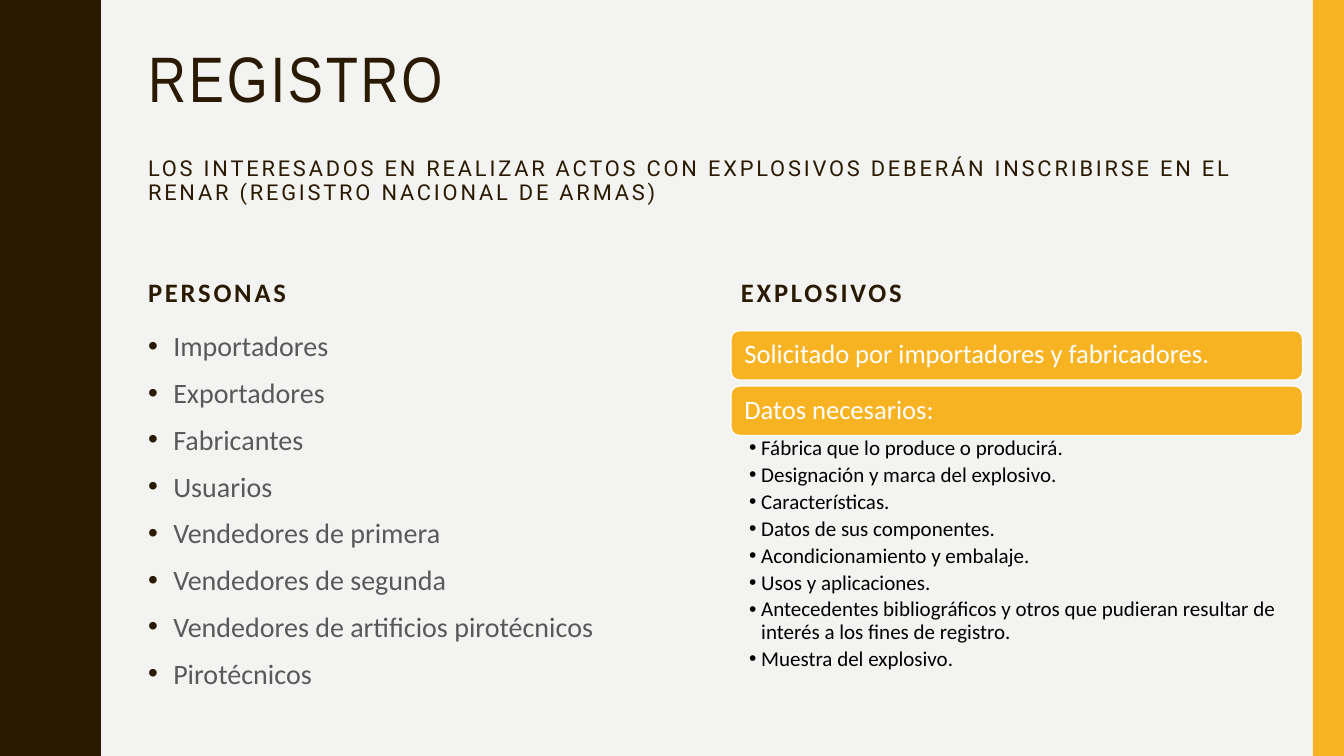
from lxml import etree
from pptx import Presentation
from pptx.dml.color import RGBColor
from pptx.enum.shapes import MSO_SHAPE
from pptx.enum.text import MSO_ANCHOR, MSO_AUTO_SIZE, PP_ALIGN
from pptx.oxml.ns import qn
from pptx.util import Inches, Pt

RECT, ROUND = MSO_SHAPE.RECTANGLE, MSO_SHAPE.ROUNDED_RECTANGLE
TOP, MID, LOW = MSO_ANCHOR.TOP, MSO_ANCHOR.MIDDLE, MSO_ANCHOR.BOTTOM
LEFT, FIXED = PP_ALIGN.LEFT, MSO_AUTO_SIZE.NONE

WIDE, HIGH = 13.33, 7.5
DARK, GOLD, PALE = "2A1A00", "F8B323", "F3F3F2"
WHITE, BLACK, GREY = "FFFFFF", "000000", "595959"
PAD = (0.1, 0.05, 0.1, 0.05)
BEND = [(0.78, 0), (0.78, 0.07), (0.79, 0.14), (0.8, 0.2), (0.81, 0.25),
        (0.83, 0.29), (0.85, 0.33), (0.87, 0.38), (0.89, 0.42),
        (0.91, 0.46), (0.93, 0.5), (0.95, 0.55), (0.96, 0.61), (0.97, 0.68)]

LEAD = ("LOS INTERESADOS EN REALIZAR ACTOS CON EXPLOSIVOS DEBERÁN "
        "INSCRIBIRSE EN EL RENAR (REGISTRO NACIONAL DE ARMAS)")
PEOPLE = ["Importadores", "Exportadores", "Fabricantes", "Usuarios",
          "Vendedores de primera", "Vendedores de segunda",
          "Vendedores de artificios pirotécnicos", "Pirotécnicos"]
BARS = ["Solicitado por importadores y fabricadores.", "Datos necesarios:"]
DATA = ["Fábrica que lo produce o producirá.",
        "Designación y marca del explosivo.", "Características.",
        "Datos de sus componentes.", "Acondicionamiento y embalaje.",
        "Usos y aplicaciones.",
        "Antecedentes bibliográficos y otros que pudieran resultar de "
        "interés a los fines de registro.", "Muestra del explosivo."]


def tint(code):
    """Turn a hex string into a colour."""
    return RGBColor.from_string(code)


def paint(shape, fill, line=None):
    """Give a shape its fill and outline, without shadow."""
    shape.shadow.inherit = False
    shape.fill.solid()
    shape.fill.fore_color.rgb = tint(fill)
    if line:
        shape.line.color.rgb = tint(line)
        shape.line.width = Pt(1)
    else:
        shape.line.fill.background()


def bullet(para, indent, color):
    """Hang a coloured bullet on a paragraph."""
    props = para._p.get_or_add_pPr()
    props.set("marL", str(Inches(indent)))
    props.set("indent", str(-Inches(indent)))
    shade = etree.SubElement(props, qn("a:buClr"))
    etree.SubElement(shade, qn("a:srgbClr"), val=color)
    etree.SubElement(props, qn("a:buFont"), typeface="Arial")
    etree.SubElement(props, qn("a:buChar"), char="•")


def write(shape, lines, size, color, face="Calibri", bold=False, track=0,
          anchor=TOP, pad=PAD, lead=None, before=0, after=0, indent=0,
          dot=DARK):
    """Fill a shape with paragraphs of one style."""
    frame = shape.text_frame
    frame.word_wrap, frame.auto_size = True, FIXED
    frame.vertical_anchor = anchor
    (frame.margin_left, frame.margin_top,
     frame.margin_right, frame.margin_bottom) = map(Inches, pad)
    for i, line in enumerate(lines):
        para = frame.add_paragraph() if i else frame.paragraphs[0]
        para.text = line
        if indent:
            bullet(para, indent, dot)
        para.alignment = LEFT
        para.line_spacing = lead
        para.space_before = Pt(before if i else 0)
        para.space_after = Pt(after)
        font = para.font
        font.name, font.size, font.bold = face, Pt(size), bold
        font.color.rgb = tint(color)
        if track:
            para._p.pPr.get_or_add_defRPr().set("spc", str(track * 100))


def label(slide, box, lines, *style, **more):
    """Place a text box and write in it."""
    write(slide.shapes.add_textbox(*map(Inches, box)), lines, *style, **more)


def edges(slide, wide, high):
    """Draw the wavy left edge and the right band."""
    period = high / 5
    wave = BEND + [(0.97, period / 2)]
    wave += [(x, period - y) for x, y in reversed(BEND[1:])]
    points = [(x, y + k * period) for k in range(5) for x, y in wave]
    points += [(0.78, high), (0, high)]
    pen = slide.shapes.build_freeform(0, 0, scale=Inches(1))
    pen.add_line_segments(points, close=True)
    paint(pen.convert_to_shape(), DARK)
    band = (wide - 0.31, 0, 0.31, high)
    paint(slide.shapes.add_shape(RECT, *map(Inches, band)), GOLD)


def header(slide, left, top, width):
    """Set the title and the lead below it."""
    title = slide.shapes.title
    title.left, title.top, title.width, title.height = map(
        Inches, (left, top, width, 0.84))
    write(title, ["REGISTRO"], 45.9, DARK, "Arial Narrow", track=2, lead=0.9)
    label(slide, (left, top + 1.1, width, 0.84), [LEAD], 15.6, DARK,
          "Roboto", track=2, lead=0.9)


def head(slide, left, top, text):
    """Write a column heading."""
    label(slide, (left, top, 5.25, 0.69), [text], 19, DARK, bold=True,
          track=2, anchor=LOW)


def people(slide, left, top):
    """Build the column of persons."""
    head(slide, left, top, "PERSONAS")
    label(slide, (left, top + 0.77, 5.25, 3.92), PEOPLE, 20, GREY,
          lead=1.1, before=7, indent=0.25)


def goods(slide, left, top, width):
    """Build the column of explosives with its bars and list."""
    head(slide, left, top, "EXPLOSIVOS")
    for i, text in enumerate(BARS):
        box = (left, top + 0.87 + i * 0.55, width, 0.49)
        bar = slide.shapes.add_shape(ROUND, *map(Inches, box))
        paint(bar, GOLD, WHITE)
        write(bar, [text], 19, WHITE, anchor=MID,
              pad=(0.11, 0.08, 0.11, 0.08), lead=0.9)
    label(slide, (left, top + 1.9, width, 2.37), DATA, 15, BLACK,
          pad=(0.18, 0.03, 0.15, 0.03), lead=0.9, after=3, indent=0.12,
          dot=BLACK)


def main():
    """Build and save the slide."""
    deck = Presentation()
    deck.slide_width, deck.slide_height = Inches(WIDE), Inches(HIGH)
    slide = deck.slides.add_slide(deck.slide_layouts[5])
    slide.background.fill.solid()
    slide.background.fill.fore_color.rgb = tint(PALE)
    edges(slide, WIDE, HIGH)
    header(slide, 1.37, 0.42, 11.12)
    people(slide, 1.37, 2.41)
    goods(slide, 7.25, 2.41, 5.67)
    deck.save("out.pptx")


if __name__ == "__main__":
    main()
